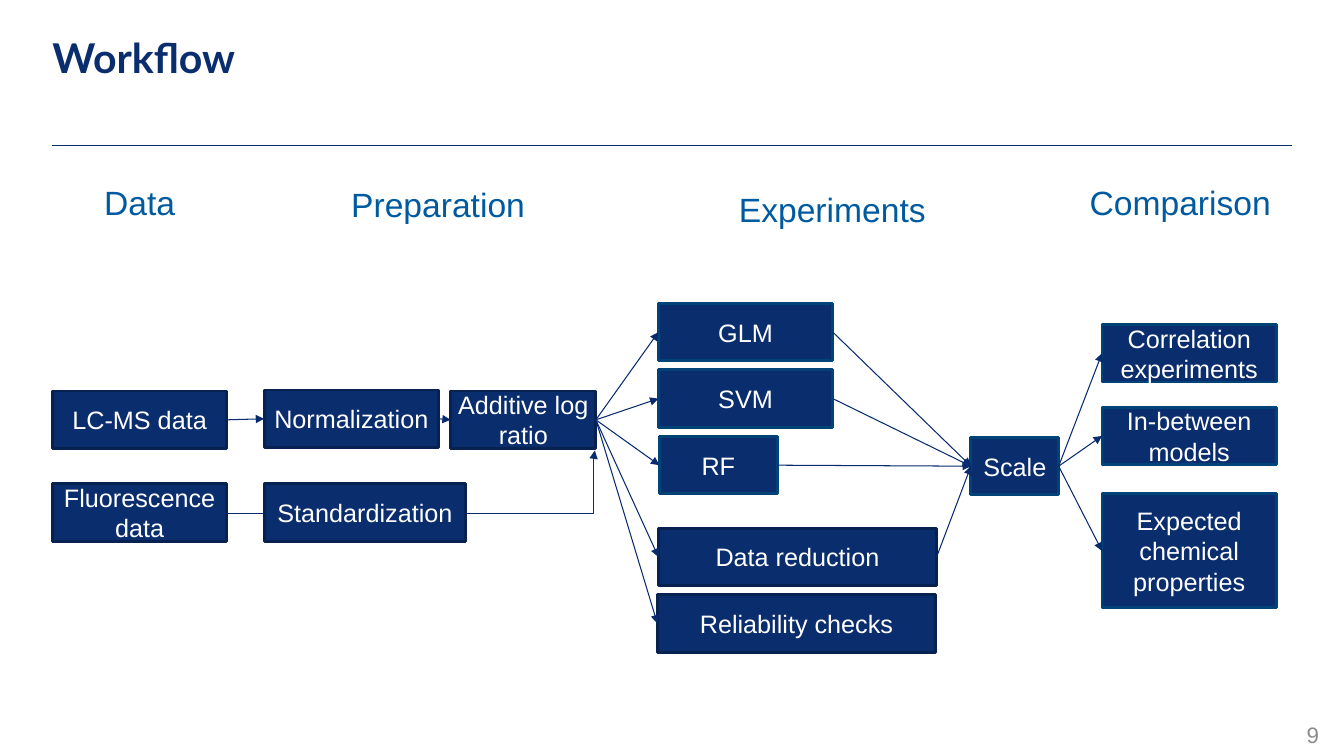
from lxml import etree
from pptx import Presentation
from pptx import util as u
from pptx.dml.color import RGBColor
from pptx.enum import shapes, text
from pptx.oxml.ns import qn

NAVY = RGBColor(0x0A, 0x2D, 0x6E)
LINE_NAVY = RGBColor(0x07, 0x2B, 0x6E)
DARK = RGBColor(0x07, 0x21, 0x51)
TEAL = RGBColor(0x00, 0x43, 0x76)
BLUE = RGBColor(0x00, 0x5A, 0xA0)
GRAY = RGBColor(0x8C, 0x8C, 0x8C)
WHITE = RGBColor(0xFF, 0xFF, 0xFF)
LEFT, RIGHT = 1, 3


def px(n):
    return u.Emu(n * 9144)


def write(sp, words, size=18, color=WHITE, font="Arial", bold=False,
          align=text.PP_ALIGN.CENTER, anchor=text.MSO_ANCHOR.MIDDLE, inset=(5, 5)):
    tf = sp.text_frame
    tf.word_wrap = True
    tf.vertical_anchor = anchor
    tf.margin_left = tf.margin_right = px(inset[0])
    tf.margin_top = tf.margin_bottom = px(inset[1])
    p = tf.paragraphs[0]
    p.alignment = align
    r = p.add_run()
    r.text = words
    r.font.size, r.font.name, r.font.bold = u.Pt(size), font, bold
    r.font.color.rgb = color


class Workflow:
    """Draws the elements of a workflow slide in one shared style."""

    def __init__(self, prs):
        self.s = prs.slides.add_slide(prs.slide_layouts[6])

    def label(self, words, x, y, w, h, **fmt):
        write(self.s.shapes.add_textbox(px(x), px(y), px(w), px(h)), words, **fmt)

    def box(self, words, x, y, w=173, h=57, edge=DARK):
        sp = self.s.shapes.add_shape(shapes.MSO_SHAPE.RECTANGLE, px(x), px(y), px(w), px(h))
        sp.shadow.inherit = False
        sp.fill.solid()
        sp.fill.fore_color.rgb = NAVY
        sp.line.color.rgb = edge
        sp.line.width = u.Pt(2)
        write(sp, words)
        return sp

    def line(self, x1=0, y1=0, x2=0, y2=0, kind=shapes.MSO_CONNECTOR.STRAIGHT, head=True):
        c = self.s.shapes.add_connector(kind, px(x1), px(y1), px(x2), px(y2))
        c.line.color.rgb = LINE_NAVY
        c.line.width = u.Pt(0.75)
        if head:
            etree.SubElement(c.line._get_or_add_ln(), qn("a:tailEnd"), type="triangle")
        etree.SubElement(c._element.spPr, qn("a:effectLst"))
        return c

    def elbow(self, x1, y1, x2, y2, bend):
        c = self.line(x1, y1, x2, y2, kind=shapes.MSO_CONNECTOR.ELBOW)
        geom = c._element.spPr.find(qn("a:prstGeom"))
        guides = geom.find(qn("a:avLst"))
        if guides is None:
            guides = etree.SubElement(geom, qn("a:avLst"))
        etree.SubElement(guides, qn("a:gd"), name="adj1", fmla=f"val {bend}")

    def arrow(self, start, end):
        c = self.line()
        c.begin_connect(start, RIGHT)
        c.end_connect(end, LEFT)


def main():
    prs = Presentation()
    prs.slide_width, prs.slide_height = px(1333), px(750)
    d = Workflow(prs)

    d.line(52, 144, 1281, 144, head=False)
    d.label("Workflow", 52, 32, 1228, 54, size=29.3, color=NAVY, font="Lato", bold=True,
            align=text.PP_ALIGN.LEFT, anchor=text.MSO_ANCHOR.TOP, inset=(0, 0))
    d.label("9", 1018, 709, 300, 40, size=16, color=GRAY,
            align=text.PP_ALIGN.RIGHT, inset=(10, 5))
    for stage, x, y, w in (("Data", 2, 176, 273), ("Preparation", 298, 178, 273),
                           ("Experiments", 689, 183, 273), ("Comparison", 998, 176, 345)):
        d.label(stage, x, y, w, 50, size=24, color=BLUE, anchor=text.MSO_ANCHOR.TOP)

    d.elbow(225, 509, 590, 447, 99700)
    lcms = d.box("LC-MS data", 52, 388)
    d.box("Fluorescence data", 52, 480)
    normal = d.box("Normalization", 262, 387)
    d.box("Standardization", 262, 480, w=200)
    ratio = d.box("Additive log ratio", 447, 388, w=144)

    glm = d.box("GLM", 653, 301, edge=TEAL)
    svm = d.box("SVM", 653, 367, edge=TEAL)
    rf = d.box("RF", 654, 433, w=117, edge=TEAL)
    reduction = d.box("Data reduction", 653, 524, w=276)
    checks = d.box("Reliability checks", 652, 590, w=276)

    scale = d.box("Scale", 963, 434, w=87, edge=TEAL)
    comparisons = [d.box(words, 1093, y, h=h, edge=TEAL) for words, y, h in (
        ("Correlation experiments", 322, 57),
        ("In-between models", 404, 57),
        ("Expected chemical properties", 490, 113))]

    d.arrow(lcms, normal)
    d.arrow(normal, ratio)
    for experiment in (glm, svm, rf, reduction, checks):
        d.arrow(ratio, experiment)
    for experiment in (glm, svm, rf, reduction):
        d.arrow(experiment, scale)
    for comparison in comparisons:
        d.arrow(scale, comparison)

    prs.save("out.pptx")


if __name__ == "__main__":
    main()
